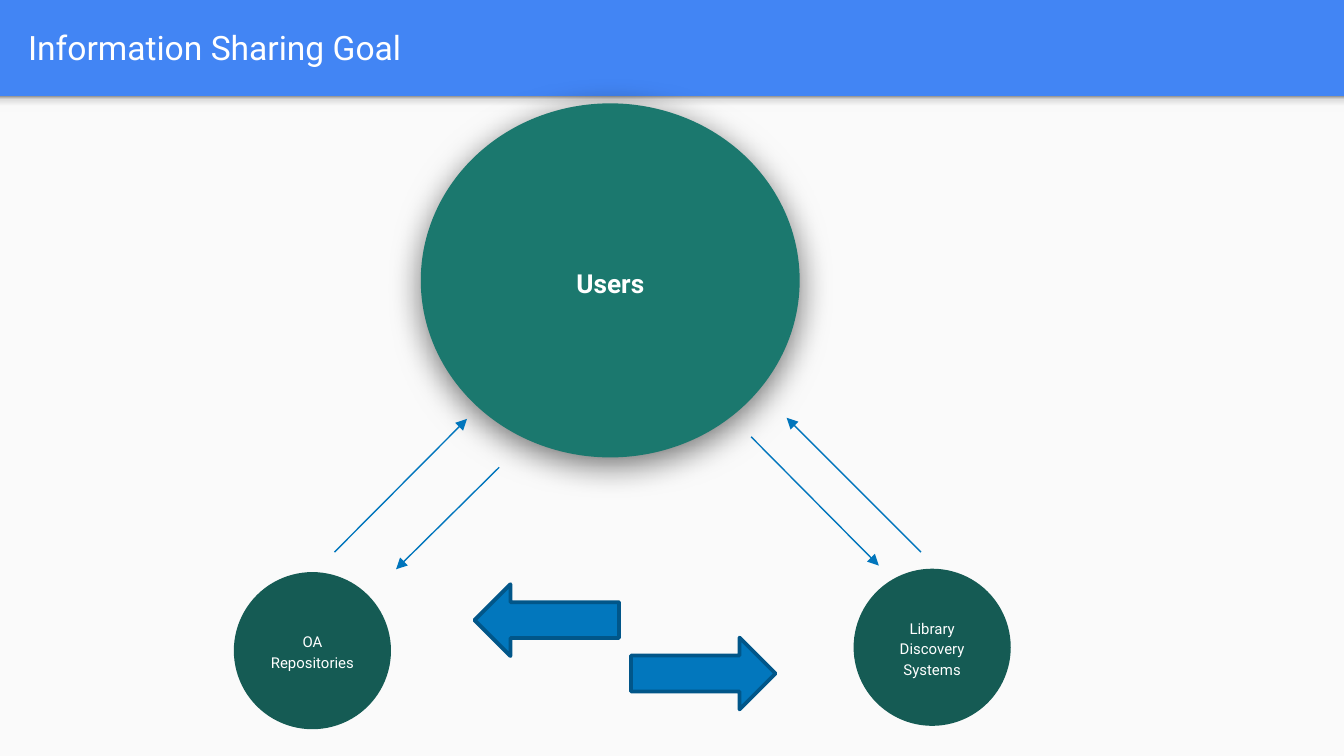
from lxml import etree
from pptx import Presentation
from pptx.dml.color import RGBColor
from pptx.enum.shapes import MSO_CONNECTOR, MSO_SHAPE
from pptx.enum.text import MSO_ANCHOR, PP_ALIGN
from pptx.oxml import parse_xml
from pptx.oxml.ns import nsdecls, qn
from pptx.util import Pt

RECTANGLE, OVAL = MSO_SHAPE.RECTANGLE, MSO_SHAPE.OVAL
LEFT_ARROW, RIGHT_ARROW = MSO_SHAPE.LEFT_ARROW, MSO_SHAPE.RIGHT_ARROW
STRAIGHT = MSO_CONNECTOR.STRAIGHT
MIDDLE = MSO_ANCHOR.MIDDLE
LEFT, CENTER = PP_ALIGN.LEFT, PP_ALIGN.CENTER

COLORS = {
    "header": "4285F4", "body": "FAFAFA", "text": "FFFFFF",
    "users": "1B786E", "system": "155B54", "flow": "0075BC",
    "exchange": "0277BD", "exchange_edge": "015689",
}
FONT = "Roboto"
SLIDE_WIDTH, SLIDE_HEIGHT = 720, 405
HEADER_HEIGHT = 51.6


def add_filled(shapes, preset, box, color):
    """Add a preset shape with a plain fill, no outline and no shadow."""
    shape = shapes.add_shape(preset, *map(Pt, box))
    shape.shadow.inherit = False
    shape.fill.solid()
    shape.fill.fore_color.rgb = RGBColor.from_string(COLORS[color])
    shape.line.fill.background()
    return shape


def add_label(shapes, box, text, size, align, bold=False, spacing=None):
    frame = shapes.add_textbox(*map(Pt, box)).text_frame
    frame.word_wrap = True
    frame.vertical_anchor = MIDDLE
    frame.margin_left = frame.margin_right = Pt(7.2)
    frame.margin_top = frame.margin_bottom = Pt(7.2)
    paragraph = frame.paragraphs[0]
    paragraph.text = text
    paragraph.alignment = align
    paragraph.line_spacing = spacing
    font = paragraph.runs[0].font
    font.name, font.size, font.bold = FONT, Pt(size), bold
    font.color.rgb = RGBColor.from_string(COLORS["text"])


prs = Presentation()
prs.slide_width, prs.slide_height = Pt(SLIDE_WIDTH), Pt(SLIDE_HEIGHT)
slide = prs.slides.add_slide(prs.slide_layouts[6])
slide.background.fill.solid()
slide.background.fill.fore_color.rgb = RGBColor.from_string(COLORS["header"])

# Body panel, header edge and title
add_filled(slide.shapes, RECTANGLE,
           (0, HEADER_HEIGHT, SLIDE_WIDTH, SLIDE_HEIGHT - HEADER_HEIGHT), "body")
header_edge = add_filled(slide.shapes, RECTANGLE,
                         (0, HEADER_HEIGHT, SLIDE_WIDTH, 8.6), "body")
header_edge.fill.gradient()
header_edge.fill.gradient_angle = 90
stops = header_edge._element.spPr.find(".//" + qn("a:gsLst"))
for stop in list(stops):
    stops.remove(stop)
for percent, shade in ((0, "F9F9F9"), (36, "F9F9F9"), (80, "DEDEDE"), (100, "999999")):
    stop = etree.SubElement(stops, qn("a:gs"), pos=str(percent * 1000))
    etree.SubElement(stop, qn("a:srgbClr"), val=shade)
add_label(slide.shapes, (8, 1.5, 695, 47.5), "Information Sharing Goal", 18, LEFT)

# Circles: text, circle box, label box, colour, size, bold
circles = (
    ("Users", (225.4, 55.4, 203, 189.7), (251.8, 107.3, 150.4, 86.4), "users", 14, True),
    ("OA Repositories", (125.3, 306.5, 84.2, 84.2), (137.4, 319.8, 60, 57.6),
     "system", 8, False),
    ("Library Discovery Systems", (457.3, 304.7, 84.2, 84.2), (469.4, 318, 60, 57.6),
     "system", 8, False),
)
for text, circle_box, label_box, color, size, bold in circles:
    group = slide.shapes.add_group_shape()
    circle = add_filled(group.shapes, OVAL, circle_box, color)
    add_label(group.shapes, label_box, text, size, CENTER, bold, 1.15)
    if color == "users":
        effects = circle._element.spPr.find(qn("a:effectLst"))
        effects.append(parse_xml(
            f'<a:outerShdw {nsdecls("a")} blurRad="{Pt(18)}" dist="{Pt(4)}" '
            'dir="5400000" algn="ctr" rotWithShape="0"><a:srgbClr val="000000">'
            '<a:alpha val="55000"/></a:srgbClr></a:outerShdw>'))

# Flows between the users and each system
flows = (
    (402.4, 234, 470.8, 303),
    (179.2, 295.8, 250.2, 224.4),
    (267.4, 250.4, 212.2, 305),
    (493.4, 295.8, 421.4, 223.8),
)
for ends in flows:
    flow = slide.shapes.add_connector(STRAIGHT, *map(Pt, ends))
    flow.line.color.rgb = RGBColor.from_string(COLORS["flow"])
    flow.line.width = Pt(0.75)
    properties = flow._element.spPr
    etree.SubElement(properties.find(qn("a:ln")), qn("a:tailEnd"), type="triangle")
    etree.SubElement(properties, qn("a:effectLst"))

# Exchange between the two systems
for preset, left, top in ((RIGHT_ARROW, 338, 341.6), (LEFT_ARROW, 254.2, 313)):
    exchange = add_filled(slide.shapes, preset, (left, top, 77.4, 38.5), "exchange")
    exchange.line.color.rgb = RGBColor.from_string(COLORS["exchange_edge"])
    exchange.line.width = Pt(2)
    etree.SubElement(exchange._element.spPr.find(qn("a:ln")), qn("a:round"))

prs.save("out.pptx")
